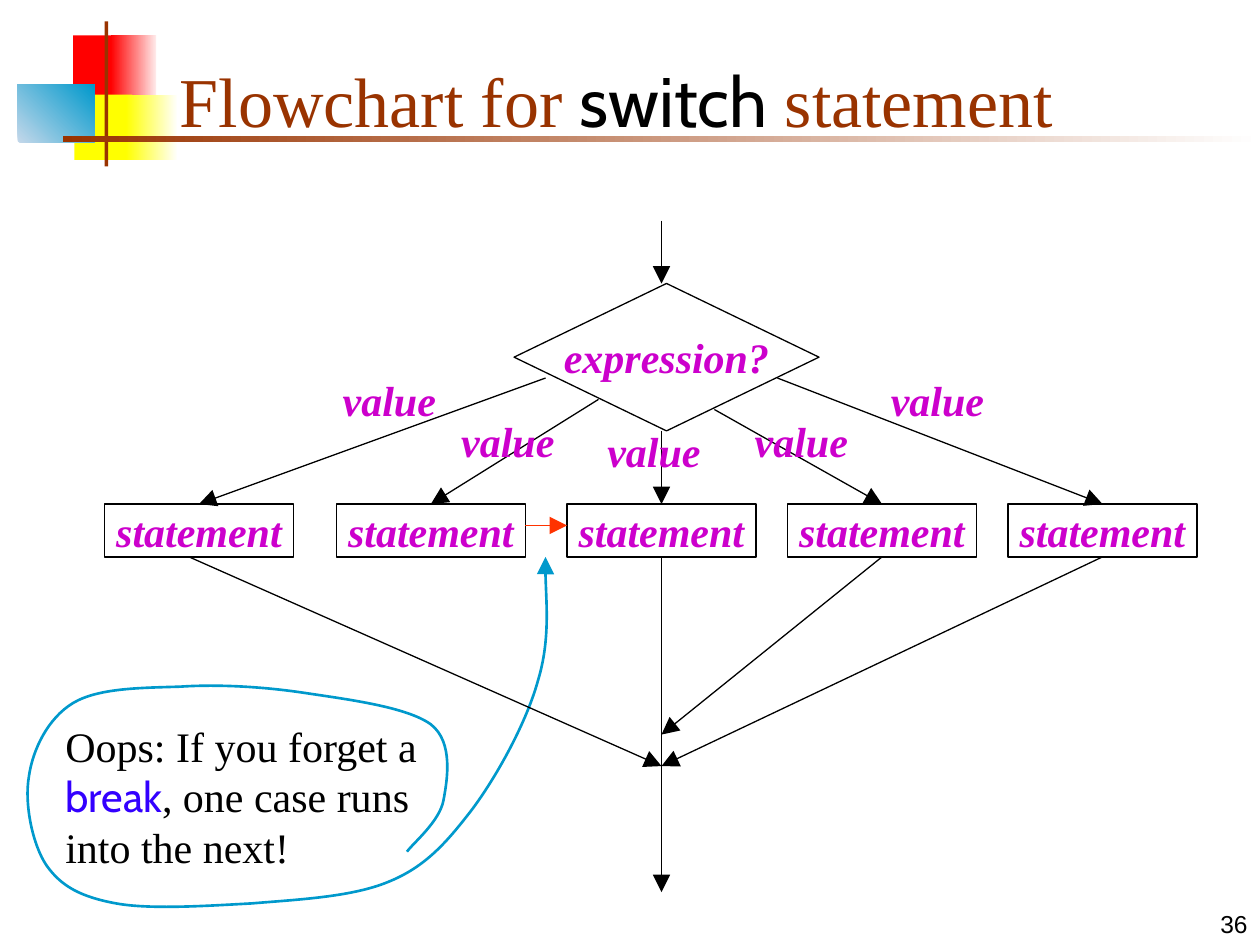
from lxml import etree
from pptx import Presentation
from pptx.dml.color import RGBColor
from pptx.enum import shapes, text
from pptx.oxml.ns import qn
from pptx.util import Inches, Pt

BLACK = RGBColor(0x00, 0x00, 0x00)
WHITE = RGBColor(0xFF, 0xFF, 0xFF)
BROWN = RGBColor(0x99, 0x33, 0x00)
RED = RGBColor(0xFF, 0x00, 0x00)
PINK = RGBColor(0xFF, 0xEA, 0xEA)
YELLOW = RGBColor(0xFF, 0xFF, 0x00)
CREAM = RGBColor(0xFF, 0xFF, 0xF8)
PALE_BLUE = RGBColor(0xC4, 0xD8, 0xEA)
BLUE = RGBColor(0x00, 0x99, 0xCC)
MAGENTA = RGBColor(0xCC, 0x00, 0xCC)
INDIGO = RGBColor(0x33, 0x00, 0xFF)
ORANGE = RGBColor(0xFF, 0x33, 0x00)

LEFT, CENTER, RIGHT = text.PP_ALIGN.LEFT, text.PP_ALIGN.CENTER, text.PP_ALIGN.RIGHT
TOP, MIDDLE, BOTTOM = text.MSO_ANCHOR.TOP, text.MSO_ANCHOR.MIDDLE, text.MSO_ANCHOR.BOTTOM
RECT = shapes.MSO_SHAPE.RECTANGLE
PROCESS = shapes.MSO_SHAPE.FLOWCHART_PROCESS
DECISION = shapes.MSO_SHAPE.FLOWCHART_DECISION


def write(tf, runs, *, size=24, font="Times New Roman", color=BLACK, bold=False,
          italic=False, align=LEFT, anchor=TOP, wrap=True):
    """Fill tf with one paragraph; each run is (text, overrides of font and color)."""
    tf.word_wrap = wrap
    tf.vertical_anchor = anchor
    p = tf.paragraphs[0]
    p.alignment = align
    for content, own in runs:
        r = p.add_run()
        r.text = content
        r.font.size = Pt(size)
        r.font.name = own.get("font", font)
        r.font.color.rgb = own.get("color", color)
        r.font.bold = bold
        r.font.italic = italic


def bend(sp):
    """Turn each three line segments of a freeform into one cubic curve."""
    lines = list(sp._element.iter(qn("a:lnTo")))
    for first, second, third in zip(*[iter(lines)] * 3):
        curve = etree.Element(qn("a:cubicBezTo"))
        first.addprevious(curve)
        for line in (first, second, third):
            curve.append(line[0])
            line.getparent().remove(line)


class Flowchart:
    LABEL = dict(color=MAGENTA, bold=True, italic=True, align=CENTER)

    def __init__(self, slide):
        self.s = slide

    def block(self, box, color, fade=None, angle=0):
        """Borderless rectangle, plain or fading to a second colour."""
        sp = self.s.shapes.add_shape(RECT, *map(Inches, box))
        sp.shadow.inherit = False
        sp.line.fill.background()
        if fade is None:
            sp.fill.solid()
            sp.fill.fore_color.rgb = color
            return
        sp.fill.gradient()
        sp.fill.gradient_angle = angle
        for stop, rgb in zip(sp.fill.gradient_stops, (color, fade)):
            stop.color.rgb = rgb

    def node(self, kind, box, label):
        sp = self.s.shapes.add_shape(kind, *map(Inches, box))
        sp.shadow.inherit = False
        sp.fill.background()
        self.stroke(sp, BLACK, 0.75)
        write(sp.text_frame, [(label, {})], anchor=MIDDLE, wrap=False, **self.LABEL)

    def textbox(self, box, runs, **style):
        sp = self.s.shapes.add_textbox(*map(Inches, box))
        write(sp.text_frame, runs, **style)

    def label(self, x, y, content):
        self.textbox((x, y, 1.02, 0.5), [(content, {})], **self.LABEL)

    def arrow(self, start, end, color=BLACK):
        sp = self.s.shapes.add_connector(
            shapes.MSO_CONNECTOR.STRAIGHT, *map(Inches, (*start, *end)))
        self.stroke(sp, color, 0.75, arrow=True)
        etree.SubElement(sp._element.spPr, qn("a:effectLst"))

    def curve_arrow(self, points, color):
        """Arrow through a start and then three points for each cubic curve."""
        start, *rest = [(Inches(x), Inches(y)) for x, y in points]
        builder = self.s.shapes.build_freeform(*start)
        builder.add_line_segments(rest, close=False)
        sp = builder.convert_to_shape()
        bend(sp)
        sp.shadow.inherit = False
        sp.fill.background()
        self.stroke(sp, color, 1.5, arrow=True)

    def stroke(self, sp, color, width, arrow=False):
        sp.line.color.rgb = color
        sp.line.width = Pt(width)
        if arrow:
            etree.SubElement(sp.line._get_or_add_ln(), qn("a:tailEnd"),
                             type="triangle", w="lg", len="lg")


def draw_frame(chart):
    chart.block((0.58, 0.28, 0.35, 0.52), RED)
    chart.block((0.88, 0.28, 0.36, 0.52), RED, PINK)
    chart.block((0.59, 0.75, 0.46, 0.52), YELLOW)
    chart.block((1, 0.75, 0.4, 0.52), YELLOW, CREAM)
    chart.block((0.14, 0.67, 0.61, 0.46), PALE_BLUE, BLUE, angle=45)
    chart.block((0.83, 0.17, 0.03, 1.15), BROWN)
    chart.block((0.5, 1.08, 9.5, 0.05), BROWN, WHITE)
    chart.textbox((7.92, 7, 2.08, 0.5), [("36", {})], size=14, font="Arial",
                  align=RIGHT, anchor=BOTTOM)
    chart.textbox((1.33, 0.25, 8.52, 0.92),
                  [("Flowchart for ", {}), ("switch", dict(font="Cabin", color=BLACK)),
                   (" statement", {})],
                  size=40, color=BROWN, anchor=BOTTOM)


def draw_warning(chart):
    chart.textbox((0.42, 5.67, 3, 1.3),
                  [("Oops: If you forget a ", {}),
                   ("break", dict(font="Cabin", color=INDIGO)),
                   (", one case runs into the next!", {})])
    chart.curve_arrow([
        (3.23, 6.76), (3.28, 6.69), (3.49, 6.52), (3.52, 6.35),
        (3.55, 6.19), (3.6, 5.89), (3.42, 5.75),
        (3.23, 5.61), (2.75, 5.55), (2.42, 5.5),
        (2.09, 5.45), (1.73, 5.43), (1.43, 5.45),
        (1.12, 5.46), (0.78, 5.46), (0.58, 5.58),
        (0.38, 5.7), (0.26, 5.95), (0.23, 6.16),
        (0.19, 6.38), (0.26, 6.71), (0.37, 6.87),
        (0.49, 7.04), (0.65, 7.12), (0.92, 7.17),
        (1.19, 7.22), (1.64, 7.19), (2, 7.17),
        (2.36, 7.14), (2.79, 7.12), (3.08, 7),
        (3.38, 6.88), (3.55, 6.68), (3.75, 6.42),
        (3.95, 6.15), (4.18, 5.73), (4.27, 5.4),
        (4.37, 5.07), (4.32, 4.62), (4.33, 4.42)], BLUE)


def draw_flow(chart):
    axis, top, bottom = 5.25, 4, 4.42
    chart.arrow((axis, 1.75), (axis, 2.25))
    chart.node(DECISION, (4.08, 2.25, 2.42, 1.17), "expression?")
    # box left, branch start, branch end x, label position
    cases = [
        (0.83, (4.33, 3), 1.58, (2.58, 2.92)),
        (2.67, (4.75, 3.17), 3.42, (3.52, 3.25)),
        (4.5, (axis, 3.42), axis, (4.68, 3.33)),
        (6.25, (5.67, 3.25), 7, (5.85, 3.25)),
        (8, (6.17, 3), 8.75, (6.93, 2.92)),
    ]
    for left, start, end_x, label_at in cases:
        chart.node(PROCESS, (left, top, 1.5, bottom - top), "statement")
        chart.arrow(start, (end_x, top))
        chart.label(*label_at, "value")
    for x, end_y in ((1.5, 6.08), (axis, 7.08), (7, 5.83), (8.75, 6.08)):
        chart.arrow((x, bottom), (axis, end_y))
    chart.arrow((4.17, 4.17), (4.5, 4.17), ORANGE)


def main():
    prs = Presentation()
    prs.slide_width, prs.slide_height = Inches(10), Inches(7.5)
    chart = Flowchart(prs.slides.add_slide(prs.slide_layouts[6]))
    draw_frame(chart)
    draw_warning(chart)
    draw_flow(chart)
    prs.save("out.pptx")


if __name__ == "__main__":
    main()
